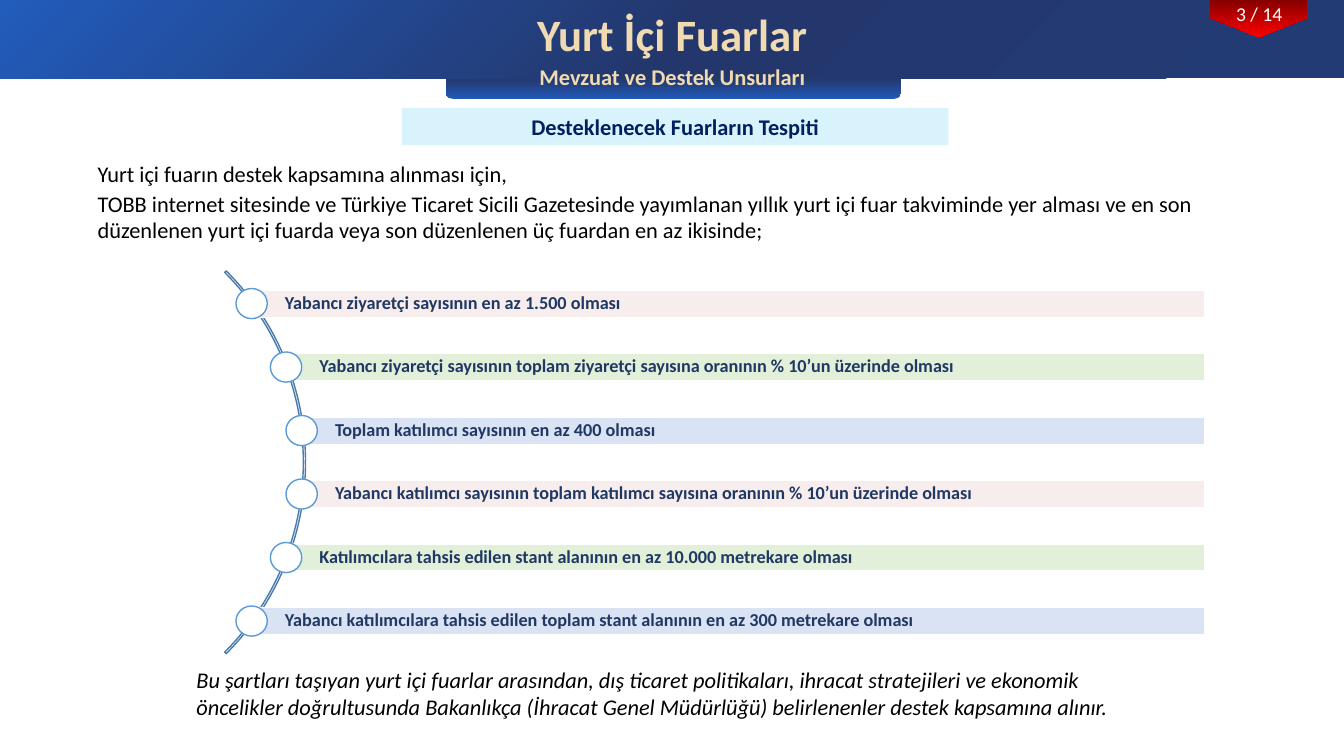
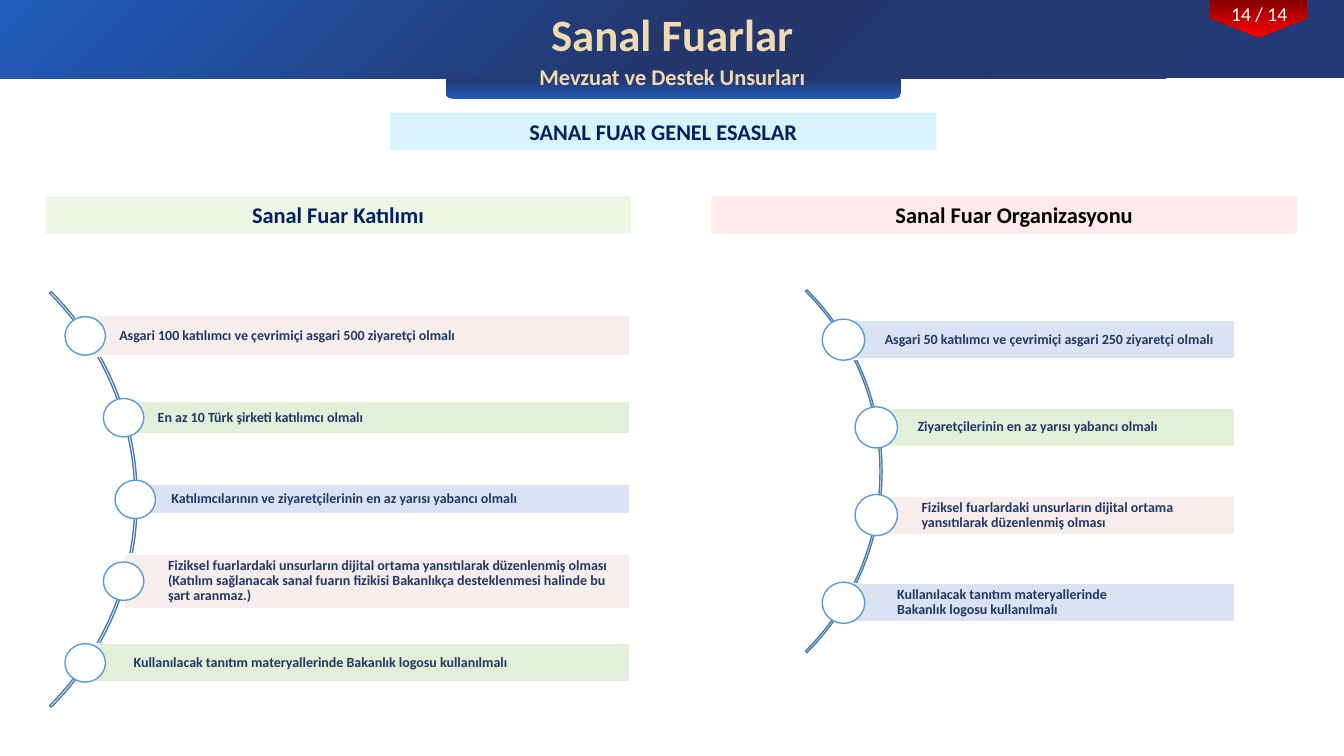
"""Builds two slides on trade fair support: domestic fairs and virtual fairs."""
from math import sqrt

from lxml import etree
from pptx import Presentation
from pptx.dml.color import RGBColor
from pptx.enum.shapes import MSO_SHAPE
from pptx.enum.text import MSO_ANCHOR, PP_ALIGN
from pptx.oxml.ns import qn
from pptx.util import Cm, Pt

RECT, OVAL, ARC = MSO_SHAPE.RECTANGLE, MSO_SHAPE.OVAL, MSO_SHAPE.BLOCK_ARC
TAB, TAG = MSO_SHAPE.ROUND_2_SAME_RECTANGLE, MSO_SHAPE.PENTAGON
TOP, MIDDLE = MSO_ANCHOR.TOP, MSO_ANCHOR.MIDDLE
LEFT, CENTER = PP_ALIGN.LEFT, PP_ALIGN.CENTER

FONT = "Calibri"
GOLD, NAVY, BLACK, WHITE = "F0DAB1", "002060", "000000", "FFFFFF"
BAR_TEXT, RING_LINE, ARC_LINE = "203864", "5B9BD5", "497CAB"
ROSE, GREEN, BLUE = "F7EDED", "E2F0D9", "DAE3F3"
SKY, LIME, CORAL = "00B0F0", "92D050", "FF7C80"
MARGINS = (0.25, 0.13, 0.25, 0.13)

BANDS = [
    (TAB, (11.23, 1.45, 11.48, 1.04), 180, 90, [(0, "225AB9"), (45, "233A73")]),
    (RECT, (0, 0, 33.87, 1.98), 0, 225, [(0, "233B75"), (50, "23376D"), (100, "225CBC")]),
    (TAG, (31.24, -0.76, 0.97, 2.44), 90, 0, [(0, "820000"), (100, "FF0000")]),
]
SUBTITLE = "Mevzuat ve Destek Unsurları"

SLIDES = [
    {
        "title": "Yurt İçi Fuarlar",
        "page": "3 / 14",
        "headings": [("Desteklenecek Fuarların Tespiti", (10.13, 2.72, 13.77, 0.94), SKY, NAVY, 0)],
        "paragraphs": [
            ("Yurt içi fuarın destek kapsamına alınması için,", (2.21, 3.91, 29.59, 0.94), False),
            ("TOBB internet sitesinde ve Türkiye Ticaret Sicili Gazetesinde yayımlanan yıllık yurt içi "
             "fuar takviminde yer alması ve en son düzenlenen yurt içi fuarda veya son düzenlenen üç "
             "fuardan en az ikisinde;", (2.21, 4.65, 28.27, 1.63), False),
            ("Bu şartları taşıyan yurt içi fuarlar arasından, dış ticaret politikaları, ihracat "
             "stratejileri ve ekonomik öncelikler doğrultusunda Bakanlıkça (İhracat Genel Müdürlüğü) "
             "belirlenenler destek kapsamına alınır.", (4.7, 16.66, 24.97, 1.63), True),
        ],
        "criteria": [{
            "arc": (-5.94, 4.83, 13.64), "ring": (0.79, 0.76), "step": 1.6,
            "right": 30.35, "indent": 0.84, "pad": 0.1, "size": 13,
            "rows": [
                ("Yabancı ziyaretçi sayısının en az 1.500 olması", ROSE, 0, 0.69),
                ("Yabancı ziyaretçi sayısının toplam ziyaretçi sayısına oranının % 10’un üzerinde olması",
                 GREEN, 0, 0.69),
                ("Toplam katılımcı sayısının en az 400 olması", BLUE, 0, 0.69),
                ("Yabancı katılımcı sayısının toplam katılımcı sayısına oranının % 10’un üzerinde olması",
                 ROSE, 0, 0.69),
                ("Katılımcılara tahsis edilen stant alanının en az 10.000 metrekare olması", GREEN, 0, 0.69),
                ("Yabancı katılımcılara tahsis edilen toplam stant alanının en az 300 metrekare olması",
                 BLUE, 0, 0.69),
            ],
        }],
    },
    {
        "title": "Sanal Fuarlar",
        "page": "14 / 14",
        "headings": [
            ("SANAL FUAR GENEL ESASLAR", (9.83, 2.84, 13.77, 0.94), SKY, NAVY, 0),
            ("Sanal Fuar Katılımı", (1.14, 4.95, 14.76, 0.94), LIME, NAVY, 0),
            ("Sanal Fuar Organizasyonu", (17.93, 4.95, 14.76, 0.94), CORAL, BLACK, 0.5),
        ],
        "paragraphs": [],
        "criteria": [
            {
                "arc": (-11.35, 5.18, 14.81), "ring": (1.02, 0.97), "step": 2.06,
                "right": 15.88, "indent": 1.09, "pad": 0.08, "size": 10,
                "rows": [
                    ("Asgari 100 katılımcı ve çevrimiçi asgari 500 ziyaretçi olmalı", ROSE, -0.23, 1.02),
                    ("En az 10 Türk şirketi katılımcı olmalı", GREEN, -0.23, 0.81),
                    ("Katılımcılarının ve ziyaretçilerinin en az yarısı yabancı olmalı", BLUE, -0.18, 0.74),
                    ("Fiziksel fuarlardaki unsurların dijital ortama yansıtılarak düzenlenmiş olması "
                     "(Katılım sağlanacak sanal fuarın fizikisi Bakanlıkça desteklenmesi halinde bu şart "
                     "aranmaz.)", ROSE, 0.03, 1.37),
                    ("Kullanılacak tanıtım materyallerinde Bakanlık logosu kullanılmalı", GREEN, 0.13, 0.97),
                ],
            },
            {
                "arc": (9.3, 5.41, 12.93), "ring": (1.07, 1.04), "step": 2.21,
                "right": 31.12, "indent": 1.17, "pad": 0.08, "size": 10,
                "rows": [
                    ("Asgari 50 katılımcı ve çevrimiçi asgari 250 ziyaretçi olmalı", BLUE, -0.13, 0.97),
                    ("Ziyaretçilerinin en az yarısı yabancı olmalı", GREEN, -0.13, 0.97),
                    ("Fiziksel fuarlardaki unsurların dijital ortama yansıtılarak düzenlenmiş olması",
                     ROSE, -0.03, 0.97),
                    ("Kullanılacak tanıtım materyallerinde\nBakanlık logosu kullanılmalı", BLUE, 0.18, 0.97),
                ],
            },
        ],
    },
]


def rgb(color):
    """Turn a hex string into a colour."""
    return RGBColor.from_string(color)


def add_block(slide, kind, box, fill=None, line=None):
    """Add a flat preset shape with an optional fill and outline."""
    block = slide.shapes.add_shape(kind, *map(Cm, box))
    block.shadow.inherit = False
    if fill:
        block.fill.solid()
        block.fill.fore_color.rgb = rgb(fill)
    else:
        block.fill.background()
    if line:
        block.line.color.rgb = rgb(line)
        block.line.width = Pt(1)
    else:
        block.line.fill.background()
    return block


def set_gradient(block, angle, stops):
    """Fill a shape with a linear gradient, its angle counted clockwise."""
    block.fill.gradient()
    block.fill.gradient_angle = (360 - angle) % 360
    stop_list = next(block.element.spPr.iter(qn("a:gsLst")))
    for old_stop in list(stop_list):
        stop_list.remove(old_stop)
    for percent, color in stops:
        stop = etree.SubElement(stop_list, qn("a:gs"), pos=str(percent * 1000))
        etree.SubElement(stop, qn("a:srgbClr"), val=color)


def write(holder, text, size, color, align=LEFT, anchor=TOP, margins=MARGINS,
          bold=False, italic=False, spacing=None):
    """Put one formatted paragraph into a shape or text box."""
    frame = holder.text_frame
    frame.word_wrap = True
    frame.vertical_anchor = anchor
    frame.margin_left, frame.margin_top, frame.margin_right, frame.margin_bottom = map(Cm, margins)
    paragraph = frame.paragraphs[0]
    paragraph.text = text
    paragraph.alignment = align
    paragraph.line_spacing = spacing
    for run in paragraph.runs:
        run.font.name = FONT
        run.font.size = Pt(size)
        run.font.bold = bold
        run.font.italic = italic
        run.font.color.rgb = rgb(color)


def add_text(slide, text, box, size, color, **style):
    """Add a text box."""
    write(slide.shapes.add_textbox(*map(Cm, box)), text, size, color, **style)


def add_header(slide, title, page):
    """Draw the bands, page number, title and subtitle."""
    for kind, box, rotation, angle, stops in BANDS:
        band = add_block(slide, kind, box)
        band.rotation = rotation
        set_gradient(band, angle, stops)
    add_text(slide, page, (30.25, -0.08, 2.97, 0.86), 14, WHITE, align=CENTER)
    add_text(slide, title, (7.57, 0.03, 18.75, 1.63), 32, GOLD, align=CENTER, bold=True)
    add_text(slide, SUBTITLE, (12.12, 1.47, 9.65, 0.94), 16, GOLD, align=CENTER, bold=True)


def add_heading(slide, text, box, tint, color, indent):
    """Add a heading on a pale see-through tint."""
    heading = add_block(slide, RECT, box, tint)
    tint_color = next(heading.element.spPr.iter(qn("a:srgbClr")))
    etree.SubElement(tint_color, qn("a:alpha"), val="15000")
    left, top, right, bottom = MARGINS
    write(heading, text, 16, color, align=CENTER, bold=True,
          margins=(left + indent, top, right, bottom))


def add_criteria(slide, group):
    """Draw an arc with a ring and a bar of text for every criterion."""
    left, top, diameter = group["arc"]
    radius = diameter / 2
    arc = add_block(slide, ARC, (left, top, diameter, diameter), line=ARC_LINE)
    for index, value in enumerate((189, 27, 0.004)):
        arc.adjustments[index] = value
    ring_width, ring_height = group["ring"]
    pad = group["pad"]
    middle = (len(group["rows"]) - 1) / 2
    for index, (text, fill, shift, height) in enumerate(group["rows"]):
        offset = (index - middle) * group["step"]
        x = left + radius + sqrt((radius - 0.05) ** 2 - offset ** 2)
        y = top + radius + offset
        bar_left = x + shift
        bar = add_block(slide, RECT, (bar_left, y - height / 2, group["right"] - bar_left, height),
                        fill, WHITE)
        write(bar, text, group["size"], BAR_TEXT, anchor=MIDDLE, bold=True, spacing=0.9,
              margins=(group["indent"], pad, pad, pad))
        add_block(slide, OVAL, (x - ring_width / 2, y - ring_height / 2, ring_width, ring_height),
                  WHITE, RING_LINE)


def main():
    """Build and save the presentation."""
    deck = Presentation()
    deck.slide_width, deck.slide_height = Cm(33.87), Cm(19.05)
    for content in SLIDES:
        slide = deck.slides.add_slide(deck.slide_layouts[6])
        add_header(slide, content["title"], content["page"])
        for heading in content["headings"]:
            add_heading(slide, *heading)
        for group in content["criteria"]:
            add_criteria(slide, group)
        for text, box, italic in content["paragraphs"]:
            add_text(slide, text, box, 16, BLACK, italic=italic)
    deck.save("out.pptx")


if __name__ == "__main__":
    main()
